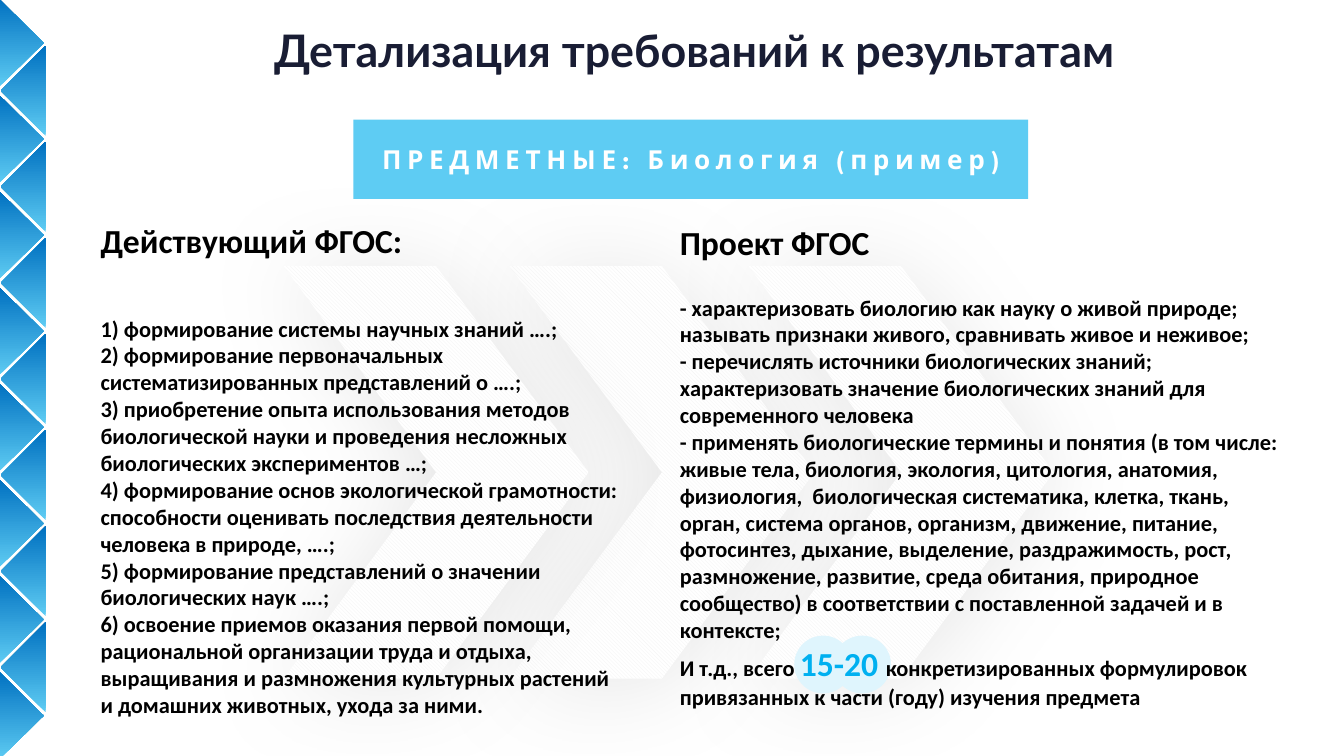
from lxml import etree
from pptx import Presentation
from pptx.dml.color import RGBColor
from pptx.enum.dml import MSO_PATTERN
from pptx.enum.shapes import MSO_SHAPE
from pptx.enum.text import MSO_ANCHOR, MSO_AUTO_SIZE, PP_ALIGN
from pptx.oxml.ns import qn
from pptx.util import Inches, Pt

UNIT = Inches(0.1)  # grid cell: 100 columns across the slide


def rgb(value):
    return RGBColor.from_string(value)


def grid(*cells):
    return [round(c * UNIT) for c in cells]


class Deck:
    sky, blue, navy, halo = "5ECCF3", "0070C0", "191D34", "DFF5FD"
    accent, white, black, pale = "00B0F0", "FFFFFF", "000000", "F2F2F2"

    def __init__(self, prs):
        self.s = prs.slides.add_slide(prs.slide_layouts[5])

    def font(self, f, size, color, name="Calibri"):
        f.name, f.size, f.bold = name, Pt(size), True
        f.color.rgb = rgb(color)

    def frame(self, tf, anchor, side=1, edge=0.5):
        tf.word_wrap, tf.auto_size = True, MSO_AUTO_SIZE.NONE
        tf.vertical_anchor = anchor
        tf.margin_left = tf.margin_right = round(side * UNIT)
        tf.margin_top = tf.margin_bottom = round(edge * UNIT)

    def title(self, text, *box):
        sp = self.s.shapes.title
        sp.left, sp.top, sp.width, sp.height = grid(*box)
        self.frame(sp.text_frame, MSO_ANCHOR.TOP, 0.7, 0.4)
        sp.text_frame.text = text
        p = sp.text_frame.paragraphs[0]
        p.alignment = PP_ALIGN.CENTER
        self.font(p.font, 24, self.navy, "Lato")

    def shape(self, kind, *box, fill=None):
        sp = self.s.shapes.add_shape(kind, *grid(*box))
        sp.shadow.inherit = False
        sp.line.fill.background()
        if fill:
            sp.fill.solid()
            sp.fill.fore_color.rgb = rgb(fill)
        return sp

    def triangle(self, base, apex, middle, half):
        fb = self.s.shapes.build_freeform(*grid(apex, middle))
        fb.add_line_segments([grid(base, middle - half), grid(base, middle + half)])
        sp = fb.convert_to_shape()
        sp.shadow.inherit = False
        sp.line.fill.background()
        sp.fill.gradient()
        sp.fill.gradient_angle = 90
        for stop, color in zip(sp.fill.gradient_stops, (self.sky, self.blue)):
            stop.color.rgb = rgb(color)

    def chevron(self, *box):
        sp = self.shape(MSO_SHAPE.CHEVRON, *box)
        sp.fill.patterned()
        sp.fill.pattern = MSO_PATTERN.LIGHT_DOWNWARD_DIAGONAL
        sp.fill.fore_color.rgb = rgb(self.pale)
        sp.fill.back_color.rgb = rgb(self.white)
        # Soft shadow: 10 % black, straight down
        effects = sp._element.spPr.find(qn("a:effectLst"))
        shadow = etree.SubElement(effects, qn("a:outerShdw"), blurRad=str(Pt(56)),
                                  dist=str(Pt(4)), dir="5400000", rotWithShape="0")
        color = etree.SubElement(shadow, qn("a:srgbClr"), val=self.black)
        etree.SubElement(color, qn("a:alpha"), val="10000")

    def banner(self, text, *box):
        tf = self.shape(MSO_SHAPE.RECTANGLE, *box, fill=self.sky).text_frame
        self.frame(tf, MSO_ANCHOR.MIDDLE, 0.7, 0.4)
        p = tf.paragraphs[0]
        p.alignment = PP_ALIGN.CENTER
        r = p.add_run()
        r.text = text
        self.font(r.font, 14, self.white, "League Spartan")
        r.font._element.set("spc", "300")

    def column(self, heading, gap, items, *box):
        tf = self.s.shapes.add_textbox(*grid(*box)).text_frame
        self.frame(tf, MSO_ANCHOR.TOP)
        p = tf.paragraphs[0]
        p.text = heading
        p.space_after = Pt(gap)
        self.font(p.font, 18, self.black)
        for item in items:
            p = tf.add_paragraph()
            p.text = item
            self.font(p.font, 12, self.black)
        return tf

    def mixed(self, tf, parts):
        p = tf.add_paragraph()
        for text, size, color in parts:
            r = p.add_run()
            r.text = text
            self.font(r.font, size, color)


CURRENT = [
    "1) формирование системы научных знаний ….;",
    "2) формирование первоначальных систематизированных представлений о ….;",
    "3) приобретение опыта использования методов биологической науки и "
    "проведения несложных биологических экспериментов …;",
    "4) формирование основ экологической грамотности: способности оценивать "
    "последствия деятельности человека в природе, ….;",
    "5) формирование представлений о значении биологических наук ….;",
    "6) освоение приемов оказания первой помощи, рациональной организации труда "
    "и отдыха, выращивания и размножения культурных растений и домашних "
    "животных, ухода за ними.",
]
DRAFT = [
    "- характеризовать биологию как науку о живой природе; называть признаки "
    "живого, сравнивать живое и неживое;",
    "- перечислять источники биологических знаний; характеризовать значение "
    "биологических знаний для современного человека",
    "- применять биологические термины и понятия (в том числе: живые тела, "
    "биология, экология, цитология, анатомия, физиология,  биологическая "
    "систематика, клетка, ткань, орган, система органов, организм, движение, "
    "питание, фотосинтез, дыхание, выделение, раздражимость, рост, размножение, "
    "развитие, среда обитания, природное сообщество) в соответствии с "
    "поставленной задачей и в контексте;",
]


def main():
    prs = Presentation()
    prs.slide_width = Inches(10)
    prs.slide_height = prs.slide_width * 9 // 16
    d = Deck(prs)

    # Left border: interlocking triangles
    pitch, half = 7.15, 3.35
    for i in range(8):
        d.triangle(-0.15, 3.25, 3.2 + i * pitch, half)
    for i in range(7):
        d.triangle(3.4, 0.05, 6.75 + i * pitch, half)

    d.title("Детализация требований к результатам", 13.3, 1.3, 76.7, 8.9)

    # Background chevrons
    for left in (37.9, 55.7, 21.1):
        d.chevron(left, 19.8, 22.7, 30.7)

    d.banner("ПРЕДМЕТНЫЕ: Биология (пример)", 26.3, 8.9, 50.2, 5.9)

    # Two columns, with a halo behind the highlighted number
    d.column("Действующий ФГОС:", 29, CURRENT, 6.5, 15.9, 41.1, 38.4)
    for left in (59.1, 62):
        d.shape(MSO_SHAPE.OVAL, left, 47.3, 4.3, 4.3, fill=d.halo)
    tf = d.column("Проект ФГОС", 17, DRAFT, 49.6, 16, 47.2, 39.7)
    d.mixed(tf, [
        ("И т.д., всего ", 12, d.black),
        ("15-20 ", 18, d.accent),
        ("конкретизированных формулировок привязанных к части (году) "
         "изучения предмета", 12, d.black),
    ])

    prs.save("out.pptx")


if __name__ == "__main__":
    main()
